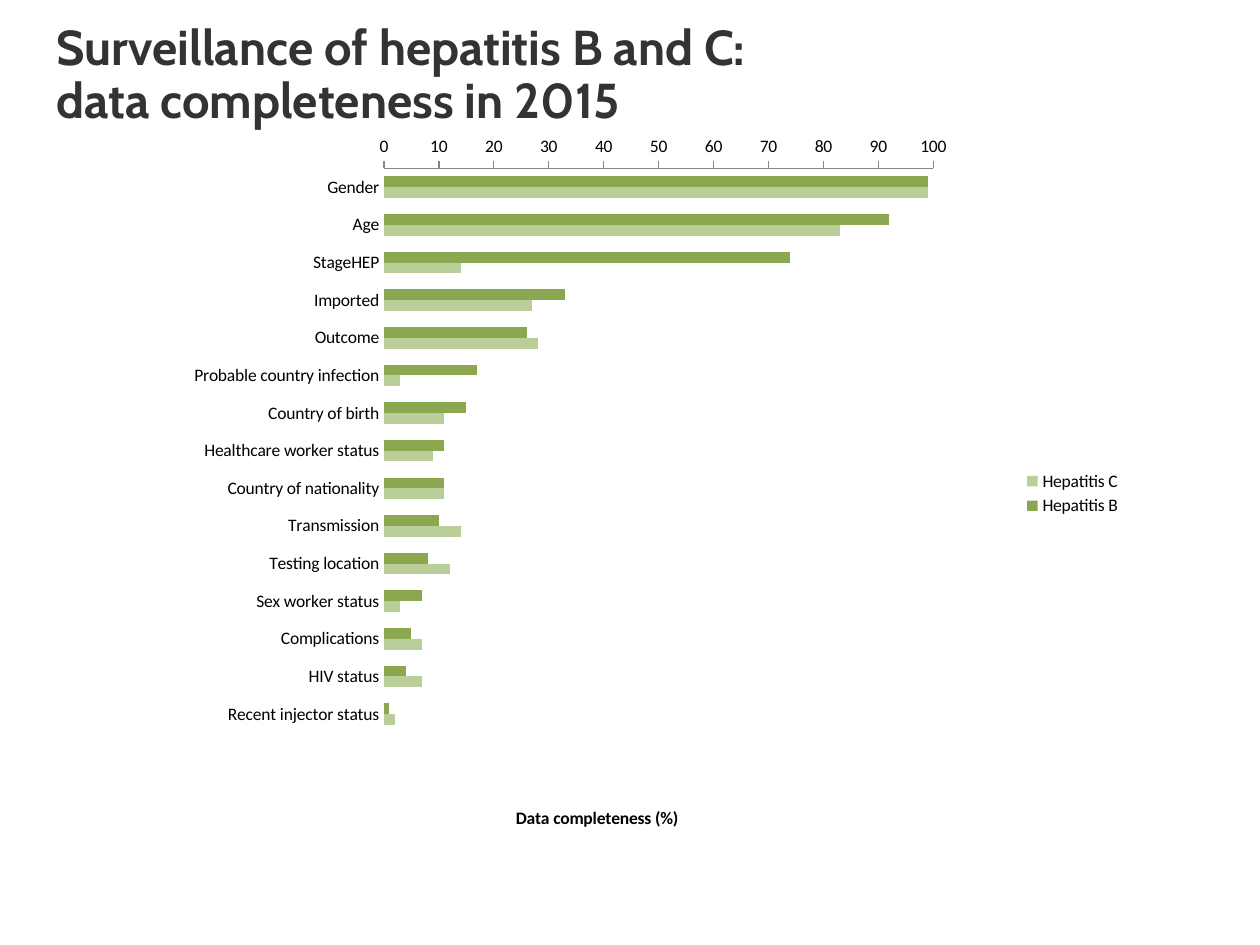
from dataclasses import dataclass

from lxml import etree
from pptx import Presentation
from pptx import util as u
from pptx.chart.data import CategoryChartData
from pptx.dml.color import RGBColor
from pptx.enum import chart as ch, text
from pptx.oxml.ns import qn

PX = 914400 / 126


@dataclass
class Theme:
    head: str = "Cabin"
    body: str = "Calibri"
    big: int = 28
    small: int = 10
    dark: str = "333333"
    black: str = "000000"
    axis: str = "868686"
    bars: tuple = ("8BA850", "B9CE98")


class Deck:
    def __init__(self, theme):
        self.theme = theme
        self.prs = Presentation()
        self.prs.slide_width, self.prs.slide_height = u.Inches(10), u.Inches(7.5)
        self.slide = self.prs.slides.add_slide(self.prs.slide_layouts[5])

    def box(self, *px):
        return [u.Emu(round(n * PX)) for n in px]

    def style(self, font, name, size, color, bold=False):
        font.name, font.size, font.bold = name, u.Pt(size), bold
        font.color.rgb = RGBColor.from_string(color)

    def title(self, lines, *px):
        t = self.theme
        shape = self.slide.shapes.title
        shape.left, shape.top, shape.width, shape.height = self.box(*px)
        frame = shape.text_frame
        frame.word_wrap = True
        frame.auto_size = text.MSO_AUTO_SIZE.NONE
        frame.vertical_anchor = text.MSO_ANCHOR.MIDDLE
        para = frame.paragraphs[0]
        para.alignment = text.PP_ALIGN.LEFT
        para.line_spacing = 0.9
        for i, line in enumerate(lines):
            if i:
                para.add_line_break()
            run = para.add_run()
            run.text = line
            self.style(run.font, t.head, t.big, t.dark, True)

    def place(self, node, index, **parts):
        """Give a chart part a manual layout, in fractions of the chart."""
        old = node.find(qn("c:layout"))
        if old is not None:
            node.remove(old)
        layout = etree.Element(qn("c:layout"))
        manual = etree.SubElement(layout, qn("c:manualLayout"))
        for tag, val in parts.items():
            etree.SubElement(manual, qn(f"c:{tag}")).set("val", str(val))
        node.insert(index, layout)

    def chart(self, cats, series, label, *px):
        t = self.theme
        data = CategoryChartData(number_format="General")
        data.categories = cats
        for name, vals in series.items():
            data.add_series(name, vals)
        chart = self.slide.shapes.add_chart(
            ch.XL_CHART_TYPE.BAR_CLUSTERED, *self.box(*px), data).chart
        self.style(chart.font, t.body, t.small, t.black)

        # Bars
        plot = chart.plots[0]
        plot.gap_width, plot.overlap = 150, 0
        plot.vary_by_categories = False
        for bar, color in zip(plot.series, t.bars):
            bar.format.fill.solid()
            bar.format.fill.fore_color.rgb = RGBColor.from_string(color)

        # Axes: first category on top, scale at the bottom
        cat, val = chart.category_axis, chart.value_axis
        cat.reverse_order = True
        cat.crosses = ch.XL_AXIS_CROSSES.MAXIMUM
        cat.format.line.fill.background()
        cat.major_tick_mark = ch.XL_TICK_MARK.NONE
        val.minimum_scale, val.maximum_scale, val.major_unit = 0, 100, 10
        val.has_major_gridlines = False
        val.major_tick_mark = ch.XL_TICK_MARK.OUTSIDE
        val.format.line.color.rgb = RGBColor.from_string(t.axis)
        val.format.line.width = u.Pt(0.75)

        # Legend and caption
        chart.has_legend = True
        chart.legend.position = ch.XL_LEGEND_POSITION.RIGHT
        chart.legend.include_in_layout = False
        chart.has_title = True
        run = chart.chart_title.text_frame.paragraphs[0].add_run()
        run.text = label
        self.style(run.font, t.body, t.small, t.black, True)
        head = chart.chart_title._element
        self.place(head, 1, xMode="edge", yMode="edge", x=0.43, y=0.92)
        area = head.getparent().find(qn("c:plotArea"))
        self.place(area, 0, layoutTarget="inner", xMode="edge", yMode="edge",
                   x=0.312, y=0.059, w=0.504, h=0.766)


CATS = ["Gender", "Age", "StageHEP", "Imported", "Outcome",
        "Probable country infection", "Country of birth",
        "Healthcare worker status", "Country of nationality", "Transmission",
        "Testing location", "Sex worker status", "Complications",
        "HIV status", "Recent injector status"]
SERIES = {
    "Hepatitis B": [99, 92, 74, 33, 26, 17, 15, 11, 11, 10, 8, 7, 5, 4, 1],
    "Hepatitis C": [99, 83, 14, 27, 28, 3, 11, 9, 11, 14, 12, 3, 7, 7, 2],
}


def main():
    deck = Deck(Theme())
    deck.title(["Surveillance of hepatitis B and C: ",
                "data completeness in 2015"], 44, 20, 1159, 113)
    deck.chart(CATS, SERIES, "Data completeness (%)", 44, 125, 1090, 737)
    deck.prs.save("out.pptx")


if __name__ == "__main__":
    main()
